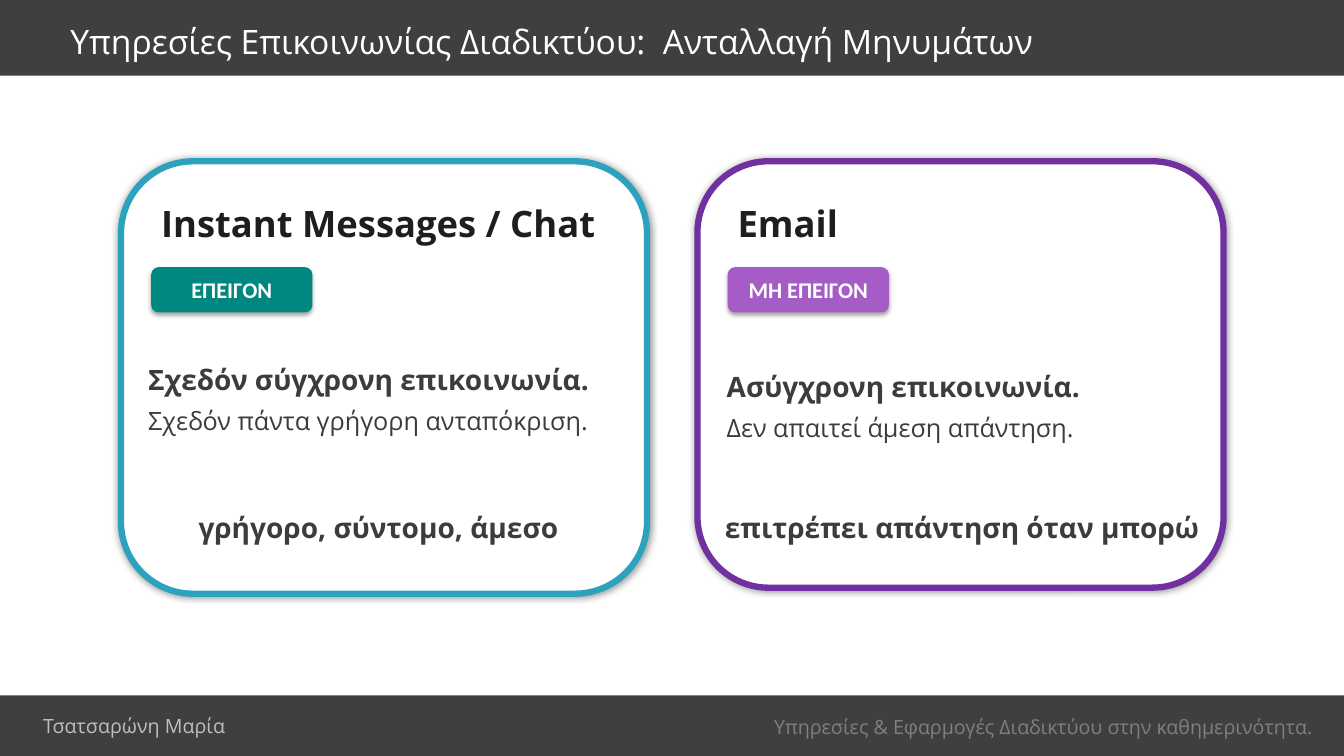
import pptx
import pptx.dml.color
import pptx.enum.shapes
import pptx.enum.text
import pptx.oxml
import pptx.oxml.ns
import pptx.util

Pt = pptx.util.Pt
SHAPE = pptx.enum.shapes.MSO_SHAPE
ANCHOR = pptx.enum.text.MSO_ANCHOR
ALIGN = pptx.enum.text.PP_ALIGN
AUTO = pptx.enum.text.MSO_AUTO_SIZE

WIDTH, HEIGHT = 960, 540
BAR, WHITE, HEADING, BODY = "3F3F3F", "FFFFFF", "1E1E1E", "3C3C3C"
PAD = 21.6  # card edge to heading and badge


def rgb(value):
    return pptx.dml.color.RGBColor.from_string(value)


class SlideBuilder:
    font = "Open Sans"

    def __init__(self, slide):
        self.slide = slide

    def shape(self, kind, box, fill, line=None, line_width=4.5):
        sp = self.slide.shapes.add_shape(kind, *map(Pt, box))
        sp.shadow.inherit = False
        sp.fill.solid()
        sp.fill.fore_color.rgb = rgb(fill)
        if line:
            sp.line.color.rgb = rgb(line)
            sp.line.width = Pt(line_width)
        else:
            sp.line.fill.background()
        return sp

    def shadow(self, sp, opacity, blur, distance=0, angle=0):
        effects = sp._element.spPr.find(pptx.oxml.ns.qn("a:effectLst"))
        effects.append(pptx.oxml.parse_xml(
            f'<a:outerShdw {pptx.oxml.ns.nsdecls("a")} blurRad="{Pt(blur)}" '
            f'dist="{Pt(distance)}" dir="{angle * 60000}" rotWithShape="0">'
            f'<a:srgbClr val="000000"><a:alpha val="{opacity * 1000}"/>'
            '</a:srgbClr></a:outerShdw>'))

    def paragraph(self, p, text, size, color, bold=False, align=None, font=None):
        p.text = text
        p.alignment = align
        p.font.name = font or self.font
        p.font.size = Pt(size)
        p.font.bold = bold
        p.font.color.rgb = rgb(color)

    def text(self, box, lines, color, align=None, anchor=ANCHOR.TOP,
             inset=True, wrap=True, grow=True):
        """Each line is (text, size, bold)."""
        tf = self.slide.shapes.add_textbox(*map(Pt, box)).text_frame
        tf.word_wrap = wrap
        tf.vertical_anchor = anchor
        tf.auto_size = AUTO.SHAPE_TO_FIT_TEXT if grow else AUTO.NONE
        if not inset:
            tf.margin_left = tf.margin_right = 0
            tf.margin_top = tf.margin_bottom = 0
        for i, (text, size, bold) in enumerate(lines):
            p = tf.add_paragraph() if i else tf.paragraphs[0]
            self.paragraph(p, text, size, color, bold, align)
            if i:
                p.space_before = Pt(6)

    def bar(self, top, height):
        self.shape(SHAPE.RECTANGLE, (0, top, WIDTH, height), BAR)

    def bar_text(self, box, text, size, color):
        self.text(box, [(text, size, False)], color,
                  anchor=ANCHOR.MIDDLE, grow=False)

    def badge(self, left, top, text, fill):
        sp = self.shape(SHAPE.ROUNDED_RECTANGLE, (left, top, 115.2, 32.4), fill)
        self.shadow(sp, 35, 3.1, 1.8, 90)
        sp.text_frame.vertical_anchor = ANCHOR.MIDDLE
        self.paragraph(sp.text_frame.paragraphs[0], text, 16, WHITE, True,
                       ALIGN.CENTER, "Calibri")

    def card(self, left, height, line, heading, heading_width, badge, badge_fill,
             message, message_at, summary, summary_box):
        top = 115.2
        sp = self.shape(SHAPE.ROUNDED_RECTANGLE, (left, top, 375.8, height),
                        WHITE, line)
        self.shadow(sp, 40, 5)
        self.text((left + PAD, top + 25.2, heading_width, 38.9),
                  [(heading, 26, True)], HEADING, wrap=False)
        self.badge(left + PAD, top + 75.6, badge, badge_fill)
        title, detail = message
        self.text((*message_at, 332.6, 51.8),
                  [(title, 20, True), (detail, 18, False)], BODY, inset=False)
        self.text(summary_box, [(summary, 20, True)], BODY, ALIGN.CENTER,
                  inset=False)


def main():
    prs = pptx.Presentation()
    prs.slide_width, prs.slide_height = Pt(WIDTH), Pt(HEIGHT)
    page = SlideBuilder(prs.slides.add_slide(prs.slide_layouts[6]))

    # Header
    page.bar(0, 54)
    page.bar_text((43.2, 13, 878.4, 32.4),
                  "Υπηρεσίες Επικοινωνίας Διαδικτύου:  Ανταλλαγή Μηνυμάτων",
                  24, WHITE)

    # Footer
    page.bar(496.8, 43.2)
    page.bar_text((545.8, 506.2, 404.6, 25.2),
                  "Υπηρεσίες & Εφαρμογές Διαδικτύου στην καθημερινότητα.",
                  14, "7F7F7F")
    page.bar_text((23.8, 505.4, 170.6, 25.2), "Τσατσαρώνη Μαρία", 14, "BFBFBF")

    # Urgent: chat
    page.card(
        left=86.4, height=308.9, line="2DA2BF",
        heading="Instant Messages / Chat", heading_width=327.6,
        badge="ΕΠΕΙΓΟΝ", badge_fill="00877F",
        message=("Σχεδόν σύγχρονη επικοινωνία.",
                 "Σχεδόν πάντα γρήγορη ανταπόκριση."),
        message_at=(105.8, 259.2),
        summary="γρήγορο, σύντομο, άμεσο",
        summary_box=(125.3, 364.3, 290.2, 24.5))

    # Not urgent: email
    page.card(
        left=498.2, height=304.6, line="7030A0",
        heading="Email", heading_width=86.4,
        badge="ΜΗ ΕΠΕΙΓΟΝ", badge_fill="A65CC6",
        message=("Ασύγχρονη επικοινωνία.", "Δεν απαιτεί άμεση απάντηση."),
        message_at=(519.1, 264.2),
        summary="επιτρέπει απάντηση όταν μπορώ",
        summary_box=(509.8, 365, 355, 24.5))

    prs.save("out.pptx")


if __name__ == "__main__":
    main()
